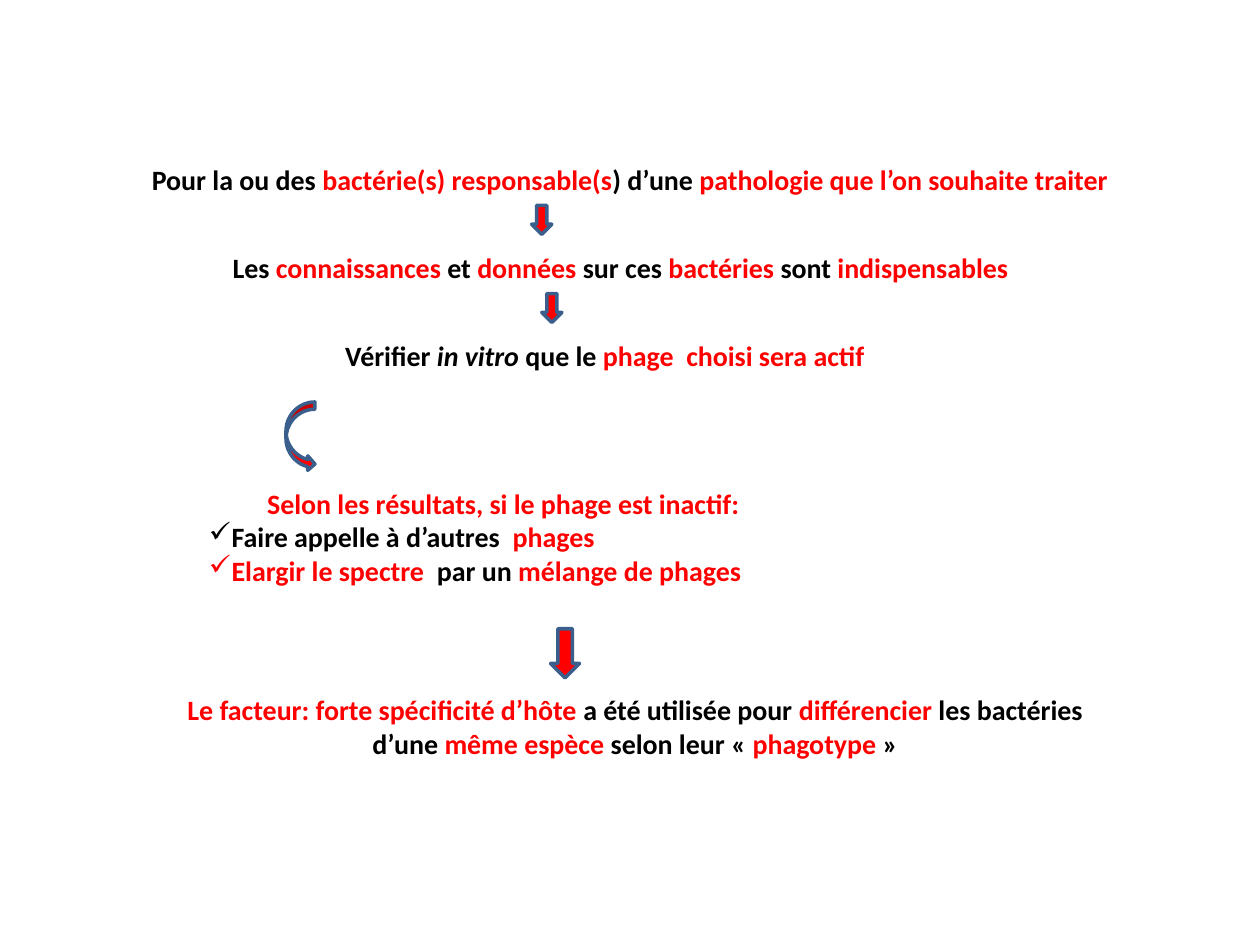
from lxml import etree
from pptx import Presentation
from pptx.dml.color import RGBColor
from pptx.enum import shapes, text
from pptx.oxml import ns
from pptx.util import Inches, Pt

COLORS = {"text": "000000", "key": "FF0000", "outline": "3A5F8C"}
HANG = Inches(0.18)

# Statements: "*" switches the key colour on and off, "_" switches italics
STATEMENTS = [
    ((0.31, 1.24, 9.38, 0.37),
     ["Pour la ou des *bactérie(s) responsable(s*) d’une "
      "*pathologie que l’on souhaite traiter*"]),
    ((1.41, 1.94, 7.03, 0.37),
     ["Les *connaissances* et *données* sur ces *bactéries* sont *indispensables*"]),
    ((2.34, 2.64, 4.92, 0.37),
     ["Vérifier _in vitro _que le *phage  choisi sera actif*"]),
    ((1.56, 3.81, 4.92, 0.91),
     ["*Selon les résultats, si le phage est inactif: *",
      "✓Faire appelle à d’autres  *phages*",
      "✓*Elargir le spectre  *par un *mélange de phages*"]),
    ((1.33, 5.45, 7.42, 0.64),
     ["*Le facteur: forte spécificité d’hôte *a été utilisée pour *différencier* "
      "les bactéries d’une *même espèce *selon leur « *phagotype *»"]),
]

DOWN = shapes.MSO_SHAPE.DOWN_ARROW
CURVED = shapes.MSO_SHAPE.CURVED_RIGHT_ARROW
ARROWS = [
    (DOWN, (4.22, 1.63, 0.16, 0.23)),
    (DOWN, (4.30, 2.33, 0.16, 0.23)),
    (CURVED, (2.27, 3.19, 0.23, 0.55)),
    (DOWN, (4.37, 4.99, 0.23, 0.39)),
]


def color(name):
    return RGBColor.from_string(COLORS[name])


def add_check_bullet(paragraph):
    properties = paragraph._p.get_or_add_pPr()
    properties.set("marL", str(HANG))
    properties.set("indent", str(-HANG))
    etree.SubElement(properties, ns.qn("a:buChar")).set("char", "✓")


def add_marked_runs(paragraph, marked):
    for key_index, key_part in enumerate(marked.split("*")):
        for italic_index, words in enumerate(key_part.split("_")):
            if words:
                run = paragraph.add_run()
                run.text = words
                run.font.color.rgb = color("key" if key_index % 2 else "text")
                if italic_index % 2:
                    run.font.italic = True


def add_statement(slide, box, lines):
    frame = slide.shapes.add_textbox(*map(Inches, box)).text_frame
    frame.word_wrap = True
    frame.auto_size = text.MSO_AUTO_SIZE.SHAPE_TO_FIT_TEXT
    for index, line in enumerate(lines):
        paragraph = frame.add_paragraph() if index else frame.paragraphs[0]
        if line.startswith("✓"):
            add_check_bullet(paragraph)
        else:
            paragraph.alignment = text.PP_ALIGN.CENTER
        paragraph.font.name = "Calibri"
        paragraph.font.size = Pt(16)
        paragraph.font.bold = True
        add_marked_runs(paragraph, line.removeprefix("✓"))


def add_arrow(slide, preset, box):
    arrow = slide.shapes.add_shape(preset, *map(Inches, box))
    arrow.shadow.inherit = False
    arrow.fill.solid()
    arrow.fill.fore_color.rgb = color("key")
    arrow.line.color.rgb = color("outline")
    arrow.line.width = Pt(2)


def main():
    deck = Presentation()
    deck.slide_width, deck.slide_height = Inches(10), Inches(7.5)
    slide = deck.slides.add_slide(deck.slide_layouts[6])

    # Steps of the reasoning, from top to bottom
    for box, lines in STATEMENTS:
        add_statement(slide, box, lines)

    # Arrows between the steps
    for preset, box in ARROWS:
        add_arrow(slide, preset, box)

    deck.save("out.pptx")


if __name__ == "__main__":
    main()
